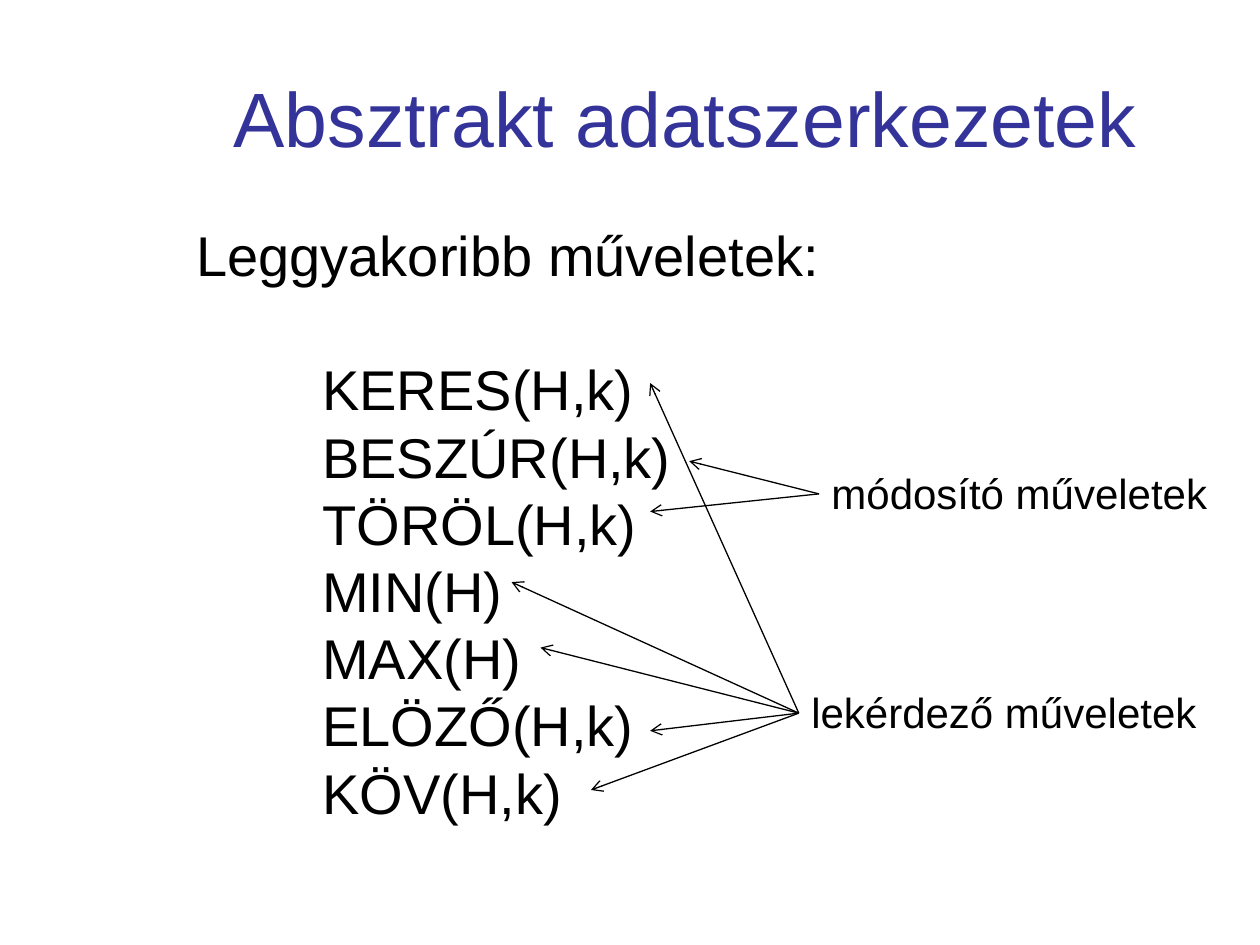
from lxml import etree
from pptx import Presentation
from pptx.dml.color import RGBColor
from pptx.enum.shapes import MSO_CONNECTOR as CONN
from pptx.enum.text import MSO_ANCHOR as ANCHOR, PP_ALIGN as ALIGN
from pptx.oxml.ns import qn
from pptx.util import Inches, Pt

FONT = "Arial"
BLACK, BLUE = "000000", "333399"
LINE_HEIGHT = Pt(38.4)


def rgb(color):
    return RGBColor.from_string(color)


def set_font(p, size, color=BLACK):
    p.font.name = FONT
    p.font.size = Pt(size)
    p.font.color.rgb = rgb(color)


def add_box(slide, box, wrap=True):
    tf = slide.shapes.add_textbox(*map(Inches, box)).text_frame
    tf.word_wrap = wrap
    return tf


def add_title(slide, box, text):
    tf = add_box(slide, box)
    tf.vertical_anchor = ANCHOR.MIDDLE
    p = tf.paragraphs[0]
    p.text = text
    p.alignment = ALIGN.CENTER
    set_font(p, 44, BLUE)


def add_operations(slide, box, heading, operations):
    tf = add_box(slide, box)
    for i, text in enumerate([heading, *operations]):
        p = tf.paragraphs[0] if i == 0 else tf.add_paragraph()
        p.text = text
        p.line_spacing = LINE_HEIGHT
        if i > 0:
            p._p.get_or_add_pPr().set("marL", str(Inches(1)))
        if i == 1:
            p.space_before = LINE_HEIGHT
        set_font(p, 32)


def add_arrow(slide, start, end):
    line = slide.shapes.add_connector(CONN.STRAIGHT, *map(Inches, start + end))
    line.line.color.rgb = rgb(BLACK)
    line.line.width = Pt(0.75)
    ln = line.line._get_or_add_ln()
    etree.SubElement(ln, qn("a:tailEnd"), type="arrow")
    etree.SubElement(line._element.spPr, qn("a:effectLst"))


def add_group_label(slide, box, text, targets):
    """A label with arrows fanning out from its left edge."""
    left, top, _, _ = box
    p = add_box(slide, box, wrap=False).paragraphs[0]
    p.text = text
    set_font(p, 24)
    for target in targets:
        add_arrow(slide, (left, top + 0.26), target)


def main():
    prs = Presentation()
    prs.slide_width, prs.slide_height = Inches(10), Inches(7.5)
    slide = prs.slides.add_slide(prs.slide_layouts[6])

    # Heading and list of operations
    add_title(slide, (1.38, 0.3, 8.12, 1.25), "Absztrakt adatszerkezetek")
    add_operations(slide, (1.46, 1.7, 7.07, 4.95), "Leggyakoribb műveletek:", [
        "KERES(H,k)", "BESZÚR(H,k)", "TÖRÖL(H,k)", "MIN(H)", "MAX(H)",
        "ELÖZŐ(H,k)", "KÖV(H,k)",
    ])

    # Labels pointing at the operations of each kind
    add_group_label(slide, (6.34, 5.4, 3.29, 0.5), "lekérdező műveletek", [
        (5.16, 3.04), (4.06, 4.62), (4.29, 5.14), (5.16, 5.8), (4.69, 6.27),
    ])
    add_group_label(slide, (6.5, 3.66, 3.22, 0.5), "módosító műveletek", [
        (5.47, 3.66), (5.16, 4.06),
    ])
    prs.save("out.pptx")


if __name__ == "__main__":
    main()
